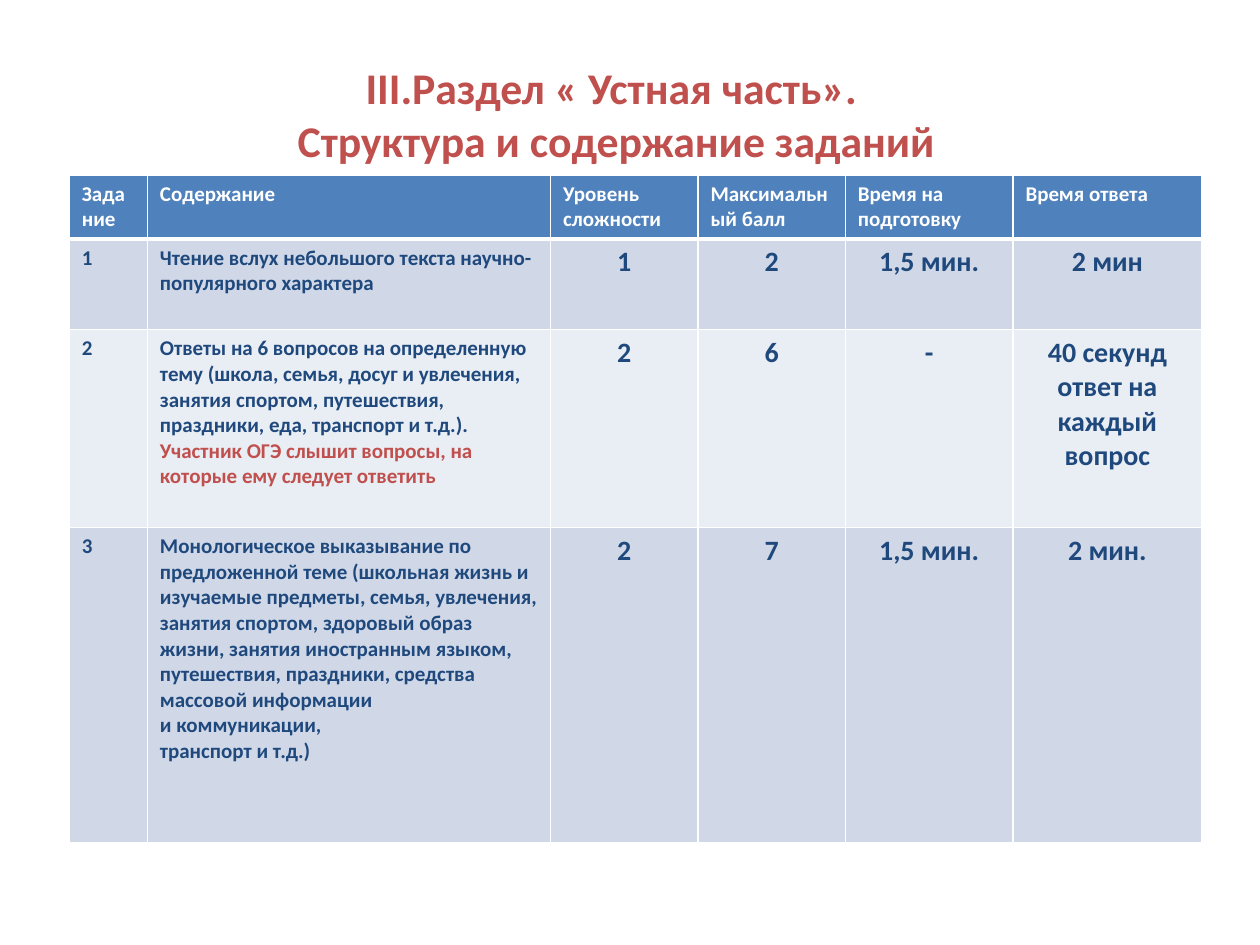
from dataclasses import dataclass

from lxml import etree
from pptx import Presentation
from pptx.dml.color import RGBColor
from pptx.enum.text import MSO_ANCHOR, PP_ALIGN
from pptx.oxml.ns import qn
from pptx.util import Inches, Pt

CENTER, LEFT = PP_ALIGN.CENTER, PP_ALIGN.LEFT
MIDDLE = MSO_ANCHOR.MIDDLE


@dataclass(frozen=True)
class Theme:
    font: str = "Calibri"
    white: str = "FFFFFF"
    navy: str = "1F497D"
    red: str = "C0504D"
    header: str = "4F81BD"
    bands: tuple = ("D0D8E8", "E9EDF4")
    title_size: int = 25
    text_size: int = 12
    value_size: int = 16
    thin: int = 1
    thick: int = 3


T = Theme()
TITLE = "III.Раздел « Устная часть». \nСтруктура и содержание заданий"
COLUMNS = (0.62, 3.2, 1.17, 1.17, 1.33, 1.5)
ROW_HEIGHTS = (0.48, 0.72, 1.57, 2.5)
HEADERS = ("Задание", "Содержание", "Уровень сложности",
           "Максимальный балл", "Время на подготовку", "Время ответа")
TASKS = (
    ("1", "Чтение вслух небольшого текста научно-популярного характера",
     "1", "2", "1,5 мин.", "2 мин"),
    ("2", "Ответы на 6 вопросов на определенную тему (школа, семья, досуг и "
     "увлечения, занятия спортом, путешествия, праздники, еда, транспорт и т.д.). ",
     "2", "6", "-", "40 секунд ответ на каждый вопрос"),
    ("3", "Монологическое выказывание по предложенной теме (школьная жизнь и "
     "изучаемые предметы, семья, увлечения, занятия спортом, здоровый образ "
     "жизни, занятия иностранным языком, путешествия, праздники, средства "
     "массовой информации \nи коммуникации, \nтранспорт и т.д.)",
     "2", "7", "1,5 мин.", "2 мин."),
)
# Highlighted endings, keyed by table row and column
REMARKS = {(2, 1): "Участник ОГЭ слышит вопросы, на которые ему следует ответить"}


def style_run(r, size, color):
    r.font.name = T.font
    r.font.size = Pt(size)
    r.font.bold = True
    r.font.color.rgb = RGBColor.from_string(color)


def write(p, text, size, color, align):
    p.text = text
    p.alignment = align
    for r in p.runs:
        style_run(r, size, color)


def set_borders(cell, top, bottom):
    tcPr = cell._tc.get_or_add_tcPr()
    widths = {"lnL": T.thin, "lnR": T.thin, "lnT": top, "lnB": bottom}
    for i, (tag, width) in enumerate(widths.items()):
        ln = etree.Element(qn(f"a:{tag}"), w=str(Pt(width)))
        fill = etree.SubElement(ln, qn("a:solidFill"))
        etree.SubElement(fill, qn("a:srgbClr"), val=T.white)
        tcPr.insert(i, ln)


def add_title(s, left, top, width, height):
    sp = s.shapes.title
    sp.left, sp.top, sp.width, sp.height = left, top, width, height
    tf = sp.text_frame
    tf.word_wrap = True
    tf.vertical_anchor = MIDDLE
    write(tf.paragraphs[0], TITLE, T.title_size, T.red, CENTER)


def add_task_table(s, left, top, width, height):
    rows = (HEADERS, *TASKS)
    table = s.shapes.add_table(len(rows), len(COLUMNS), left, top, width, height).table
    for column, size in zip(table.columns, COLUMNS):
        column.width = Inches(size)
    for row, size in zip(table.rows, ROW_HEIGHTS):
        row.height = Inches(size)

    for i, texts in enumerate(rows):
        is_header = i == 0
        fill = T.header if is_header else T.bands[(i - 1) % 2]
        color = T.white if is_header else T.navy
        for j, text in enumerate(texts):
            cell = table.cell(i, j)
            cell.fill.solid()
            cell.fill.fore_color.rgb = RGBColor.from_string(fill)
            # A thick rule separates the header from the tasks
            set_borders(cell, T.thick if i == 1 else T.thin,
                        T.thick if is_header else T.thin)
            is_value = not is_header and j > 1
            p = cell.text_frame.paragraphs[0]
            write(p, text, T.value_size if is_value else T.text_size, color,
                  CENTER if is_value else LEFT)
            if (i, j) in REMARKS:
                r = p.add_run()
                r.text = REMARKS[i, j]
                style_run(r, T.text_size, T.red)


def main():
    prs = Presentation()
    prs.slide_width, prs.slide_height = Inches(10), Inches(7.5)
    s = prs.slides.add_slide(prs.slide_layouts[5])  # Title Only
    add_title(s, Inches(0.39), Inches(0.39), Inches(9), Inches(1.02))
    add_task_table(s, Inches(0.55), Inches(1.39), Inches(sum(COLUMNS)),
                   Inches(sum(ROW_HEIGHTS)))
    prs.save("out.pptx")


if __name__ == "__main__":
    main()
